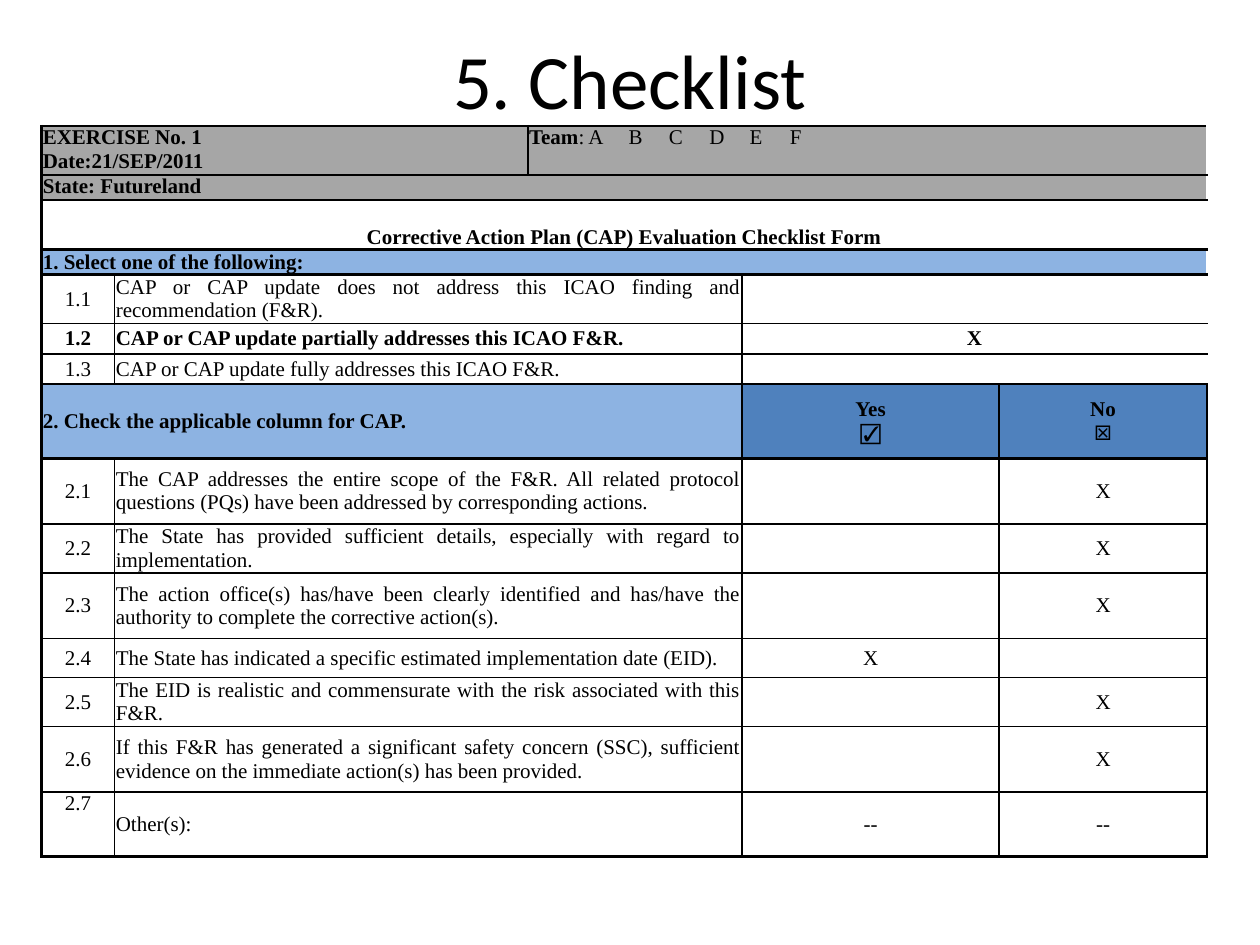
from lxml import etree
from pptx import Presentation, util as u
from pptx.dml.color import RGBColor
from pptx.enum import text
from pptx.oxml.ns import qn

LEFT, MID, JUST = text.PP_ALIGN.LEFT, text.PP_ALIGN.CENTER, text.PP_ALIGN.JUSTIFY
TOP, CENTER, BASE = text.MSO_ANCHOR.TOP, text.MSO_ANCHOR.MIDDLE, text.MSO_ANCHOR.BOTTOM
SERIF = "Times New Roman"
GREY, PALE, BLUE, WHITE = "A6A6A6", "8DB3E2", "4F81BD", "FFFFFF"
COLS = [0.58, 3.28, 1.7, 2.04, 1.65]
ROWS = [0.39, 0.2, 0.39, 0.2, 0.39, 0.24, 0.24, 0.59,
        0.52, 0.39, 0.52, 0.31, 0.39, 0.52, 0.51]
THICK = {0, 1, 2, 3, 4, 7, 8, len(ROWS)}  # heavy horizontal rules

# number, statement, mark, bold, alignment
PICKS = [
    ("1.1", "CAP or CAP update does not address this ICAO finding and recommendation (F&R).",
     "", False, JUST),
    ("1.2", "CAP or CAP update partially addresses this ICAO F&R.", "X", True, LEFT),
    ("1.3", "CAP or CAP update fully addresses this ICAO F&R.", "", False, LEFT),
]
# number, statement, yes, no
CHECKS = [
    ("2.1", "The CAP addresses the entire scope of the F&R. All related protocol questions "
     "(PQs) have been addressed by corresponding actions.", "", "X"),
    ("2.2", "The State has provided sufficient details, especially with regard to "
     "implementation.", "", "X"),
    ("2.3", "The action office(s) has/have been clearly identified and has/have the authority "
     "to complete the corrective action(s).", "", "X"),
    ("2.4", "The State has indicated a specific estimated implementation date\u00a0(EID).",
     "X", ""),
    ("2.5", "The EID is realistic and commensurate with the risk associated with this F&R.",
     "", "X"),
    ("2.6", "If this F&R has generated a significant safety concern (SSC), sufficient evidence "
     "on the immediate action(s) has been provided.", "", "X"),
    ("2.7", "Other(s):", "--", "--"),
]


def color(code):
    return RGBColor.from_string(code)


def add_run(para, words, size=12, bold=False, face=SERIF):
    run = para.add_run()
    run.text = words
    font = run.font
    font.size, font.bold, font.name = u.Pt(size), bold, face
    font.color.rgb = color("000000")


def add_line(cell, side, width):
    props = cell._tc.get_or_add_tcPr()
    line = etree.SubElement(props, qn("a:ln" + side), w=str(u.Pt(width)))
    fill = etree.SubElement(line, qn("a:solidFill"))
    etree.SubElement(fill, qn("a:srgbClr"), val="000000")


def add_tabs(para, first, step, count):
    stops = etree.SubElement(para._p.get_or_add_pPr(), qn("a:tabLst"))
    for i in range(count):
        etree.SubElement(stops, qn("a:tab"), pos=str(u.Inches(first + i * step)), algn="l")


def set_edges(grid, row, col, span):
    """Heavy lines around the table and its sections, thin ones inside."""
    last = col + span - 1
    for i in range(col, last + 1):
        cell = grid.cell(row, i)
        if i == col:
            heavy = col == 0 or row == 0
            add_line(cell, "L", 1.5 if heavy else 1)
        if i == last:
            heavy = last == len(COLS) - 1 or row == 0
            add_line(cell, "R", 1.5 if heavy else 1)
        add_line(cell, "T", 1.5 if row in THICK else 1)
        add_line(cell, "B", 1.5 if row + 1 in THICK else 1)


def put(grid, row, col, span, lines, fill=None, align=LEFT, anchor=CENTER, bold=False):
    """Fill one cell; each line becomes a paragraph."""
    cell = grid.cell(row, col)
    set_edges(grid, row, col, span)
    if span > 1:
        cell.merge(grid.cell(row, col + span - 1))
    cell.margin_left = cell.margin_right = u.Inches(0.01)
    cell.margin_top = cell.margin_bottom = 0
    cell.vertical_anchor = anchor
    if fill:
        cell.fill.solid()
        cell.fill.fore_color.rgb = color(fill)
    else:
        cell.fill.background()
    frame = cell.text_frame
    for i, words in enumerate(lines):
        para = frame.add_paragraph() if i else frame.paragraphs[0]
        para.alignment = align
        if words:
            add_run(para, words, bold=bold)
        else:  # keeps an empty cell from stretching its row
            etree.SubElement(para._p, qn("a:endParaRPr"), sz="1200")
    return cell


def add_title(slide):
    title = slide.shapes.title
    title.left, title.top = u.Inches(0.5), u.Inches(0)
    title.width, title.height = u.Inches(9), u.Inches(1.25)
    frame = title.text_frame
    frame.vertical_anchor = CENTER
    para = frame.paragraphs[0]
    para.alignment = MID
    add_run(para, "5. Checklist", 44, face="Calibri")


def add_grid(slide):
    frame = slide.shapes.add_table(len(ROWS), len(COLS), u.Inches(0.33), u.Inches(1),
                                   u.Inches(sum(COLS)), u.Inches(sum(ROWS)))
    grid = frame.table
    grid.first_row = grid.horz_banding = False
    for col, width in zip(grid.columns, COLS):
        col.width = u.Inches(width)
    for row, height in zip(grid.rows, ROWS):
        row.height = u.Inches(height)
    return grid


def add_heads(grid):
    put(grid, 0, 0, 2, ["EXERCISE No. 1", "Date:21/SEP/2011"], GREY, anchor=TOP, bold=True)
    team = put(grid, 0, 2, 3, ["Team"], GREY, anchor=TOP, bold=True)
    para = team.text_frame.paragraphs[0]
    add_run(para, ": " + "\t".join("ABCDEF"))
    add_tabs(para, 0.79, 0.32, 5)
    put(grid, 1, 0, 5, ["State: Futureland"], GREY, anchor=TOP, bold=True)
    put(grid, 2, 0, 5, ["Corrective Action Plan (CAP) Evaluation Checklist Form"],
        WHITE, MID, BASE, True)
    put(grid, 3, 0, 5, ["1. Select one of the following:"], PALE, bold=True)
    put(grid, 7, 0, 3, ["2. Check the applicable column for CAP."], PALE, bold=True)
    put(grid, 7, 3, 1, ["Yes", "☑"], BLUE, MID, bold=True)
    put(grid, 7, 4, 1, ["No", "☒"], BLUE, MID, bold=True)


def main():
    deck = Presentation()
    deck.slide_width, deck.slide_height = u.Inches(10), u.Inches(7.5)
    slide = deck.slides.add_slide(deck.slide_layouts[5])
    add_title(slide)
    grid = add_grid(slide)
    add_heads(grid)
    # Section 1: one mark across both answer columns
    for row, (num, words, mark, bold, align) in enumerate(PICKS, 4):
        put(grid, row, 0, 1, [num], align=MID, bold=bold)
        put(grid, row, 1, 2, [words], align=align, bold=bold)
        put(grid, row, 3, 2, [mark], align=MID, bold=bold)
    # Section 2: yes and no columns
    for row, (num, words, yes, no) in enumerate(CHECKS, 8):
        final = row == len(ROWS) - 1
        put(grid, row, 0, 1, [num], align=MID, anchor=TOP if final else CENTER)
        put(grid, row, 1, 2, [words], align=LEFT if final else JUST)
        put(grid, row, 3, 1, [yes], align=MID)
        put(grid, row, 4, 1, [no], align=MID)
    deck.save("out.pptx")


if __name__ == "__main__":
    main()
